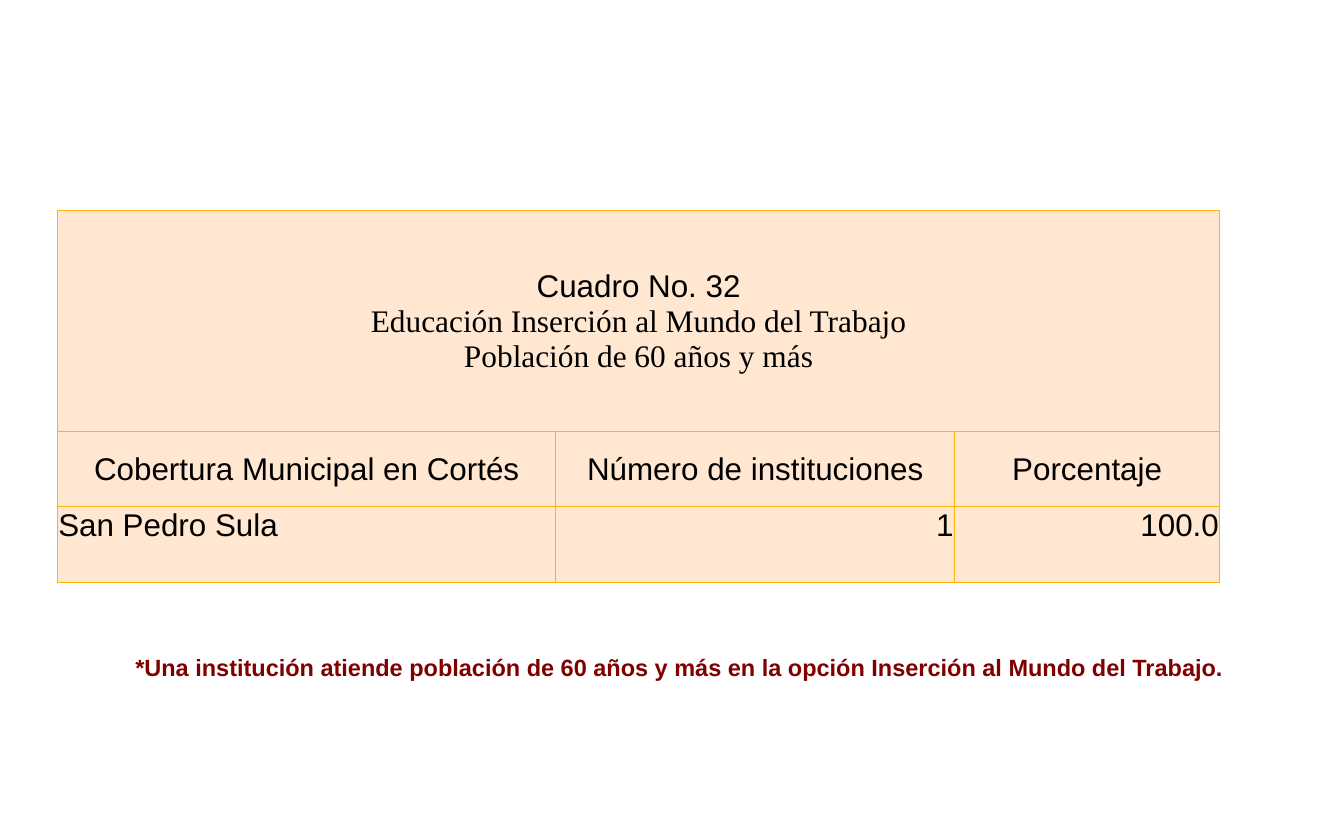
"""Build the slide with table 32 on institutions serving people aged 60 and over."""
from dataclasses import dataclass

from lxml.etree import SubElement
from pptx import Presentation
from pptx.dml.color import RGBColor
from pptx.enum.text import MSO_ANCHOR, MSO_AUTO_SIZE, PP_ALIGN
from pptx.oxml.ns import qn
from pptx.util import Inches, Pt


@dataclass(frozen=True)
class Theme:
    sans: str = "Arial"
    serif: str = "Times New Roman"
    ink: str = "000000"
    note: str = "800000"
    cell: str = "FFE7D1"
    border: str = "FEB604"
    border_width: float = 0.75
    table_size: int = 24
    note_size: int = 18


theme = Theme()


def style_paragraph(paragraph, text, align, font_name, size, color, bold=False):
    paragraph.text = text
    paragraph.alignment = align
    font = paragraph.font
    font.name = font_name
    font.size = Pt(size)
    font.bold = bold
    font.color.rgb = RGBColor.from_string(color)


def style_cell(cell, anchor):
    cell.margin_left = cell.margin_top = cell.margin_right = Inches(0.01)
    cell.margin_bottom = 0
    cell.vertical_anchor = anchor
    properties = cell._tc.get_or_add_tcPr()
    for side in ("a:lnL", "a:lnR", "a:lnT", "a:lnB"):
        line = SubElement(properties, qn(side), w=str(Pt(theme.border_width)))
        fill = SubElement(line, qn("a:solidFill"))
        SubElement(fill, qn("a:srgbClr"), val=theme.border)
    cell.fill.solid()
    cell.fill.fore_color.rgb = RGBColor.from_string(theme.cell)


deck = Presentation()
deck.slide_width = Inches(14.29)
deck.slide_height = Inches(8.9)
page = deck.slides.add_slide(deck.slide_layouts[6])

title_lines = [
    ("Cuadro No. 32", theme.sans),
    ("Educación Inserción al Mundo del Trabajo", theme.serif),
    ("Población de 60 años y más", theme.serif),
]
headings = ["Cobertura Municipal en Cortés", "Número de instituciones", "Porcentaje"]
values = ["San Pedro Sula", "1", "100.0"]
column_widths = [5.3, 4.24, 2.82]
row_heights = [2.35, 0.8, 0.8]

table = page.shapes.add_table(
    len(row_heights), len(column_widths), Inches(0.61), Inches(2.24),
    Inches(sum(column_widths)), Inches(sum(row_heights))).table
table.first_row = table.horz_banding = False
for column, width in zip(table.columns, column_widths):
    column.width = Inches(width)
for row, height in zip(table.rows, row_heights):
    row.height = Inches(height)

anchors = [MSO_ANCHOR.MIDDLE, MSO_ANCHOR.MIDDLE, MSO_ANCHOR.TOP]
for row, anchor in zip(table.rows, anchors):
    for cell in row.cells:
        style_cell(cell, anchor)

title_cell = table.cell(0, 0)
title_cell.merge(table.cell(0, len(column_widths) - 1))
title_frame = title_cell.text_frame
for index, (text, font_name) in enumerate(title_lines):
    paragraph = title_frame.add_paragraph() if index else title_frame.paragraphs[0]
    style_paragraph(paragraph, text, PP_ALIGN.CENTER, font_name, theme.table_size, theme.ink)

body_rows = [
    (headings, [PP_ALIGN.CENTER] * 3),
    (values, [PP_ALIGN.LEFT, PP_ALIGN.RIGHT, PP_ALIGN.RIGHT]),
]
for row_index, (texts, alignments) in enumerate(body_rows, start=1):
    for column_index, (text, align) in enumerate(zip(texts, alignments)):
        paragraph = table.cell(row_index, column_index).text_frame.paragraphs[0]
        style_paragraph(paragraph, text, align, theme.sans, theme.table_size, theme.ink)

note_box = page.shapes.add_textbox(Inches(1.16), Inches(6.89), Inches(12.13), Inches(0.4))
note_frame = note_box.text_frame
note_frame.word_wrap = True
note_frame.auto_size = MSO_AUTO_SIZE.SHAPE_TO_FIT_TEXT
style_paragraph(
    note_frame.paragraphs[0],
    "*Una institución atiende población de 60 años y más en la opción Inserción al Mundo del Trabajo.",
    PP_ALIGN.CENTER, theme.sans, theme.note_size, theme.note, bold=True)

deck.save("out.pptx")
